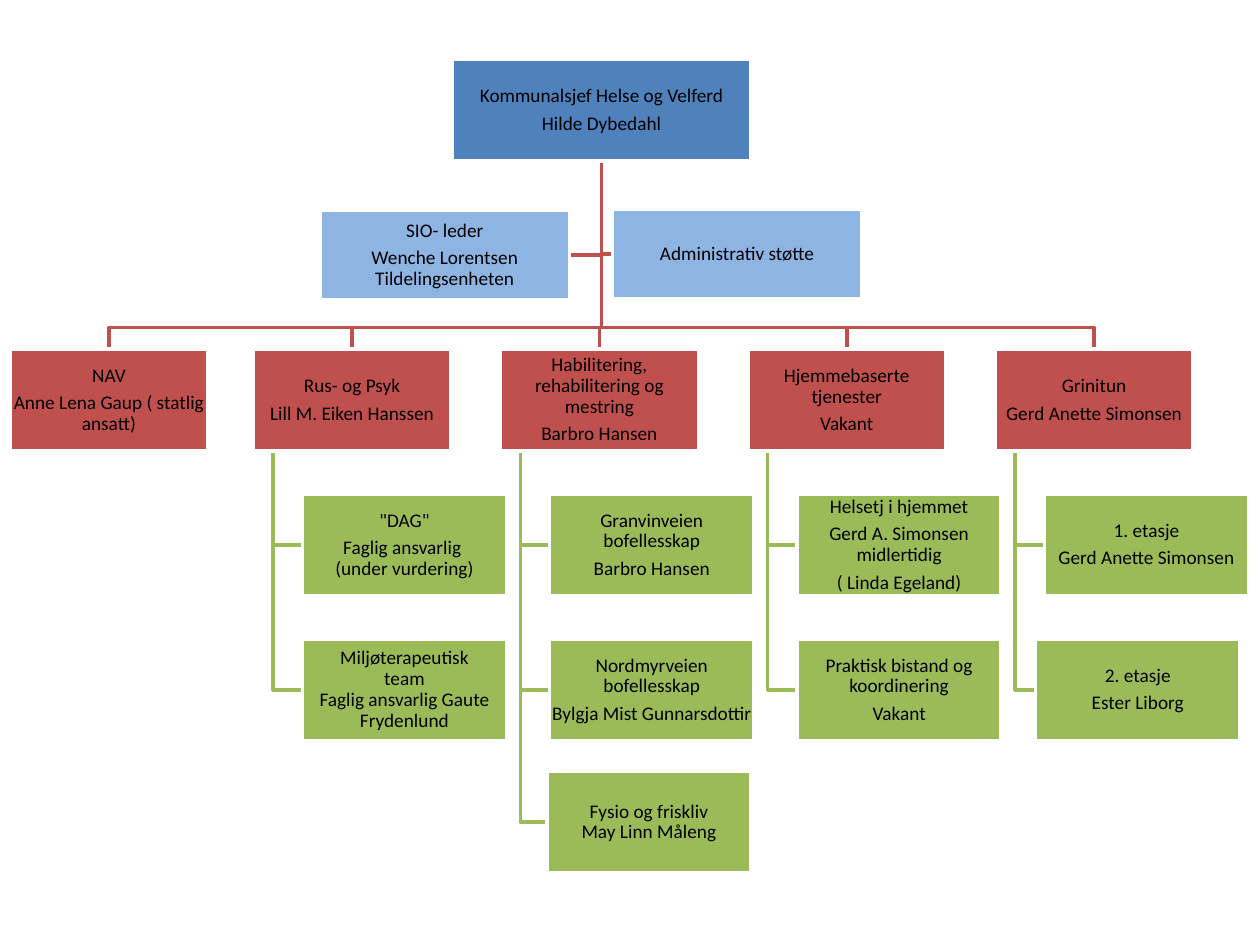
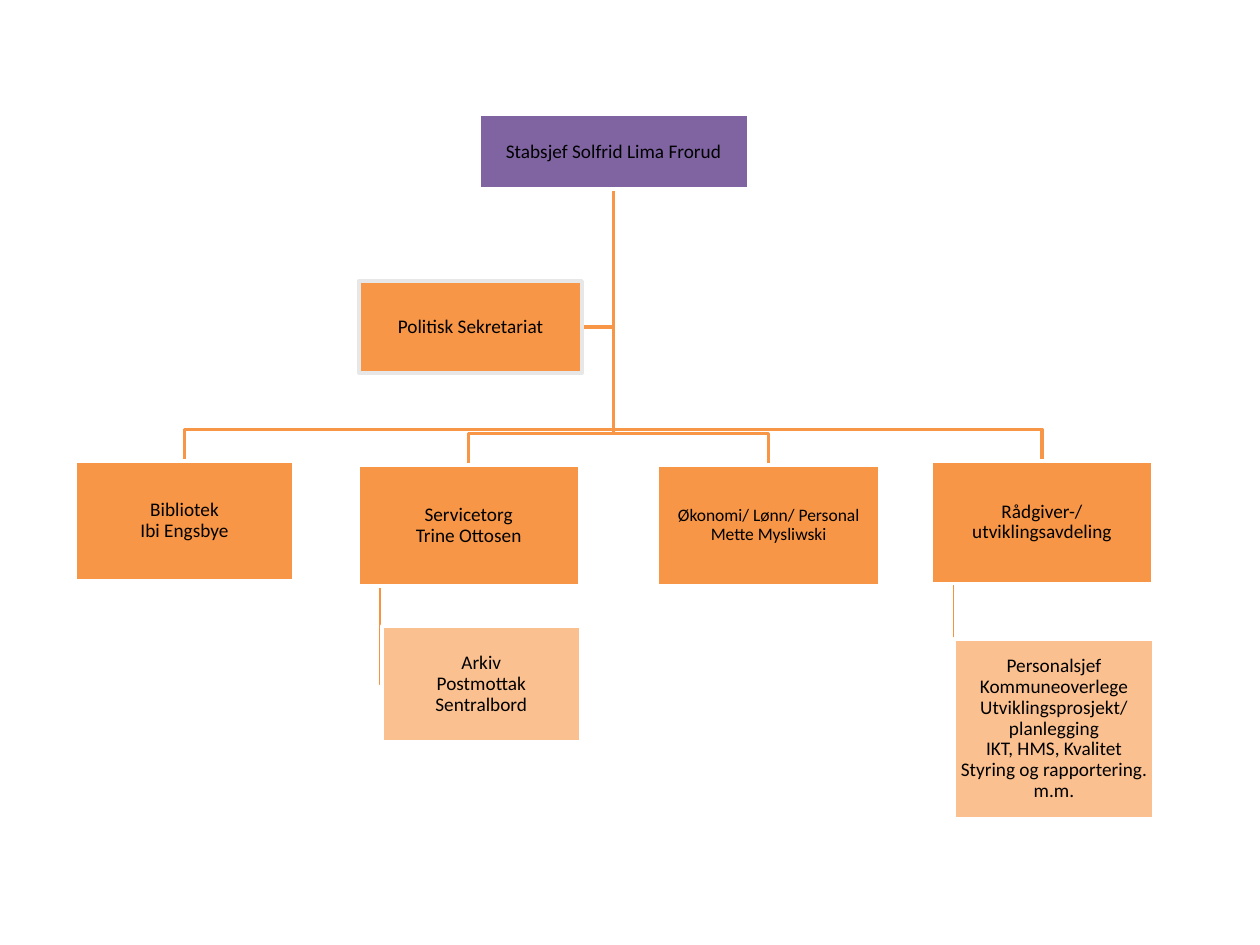
from dataclasses import dataclass

from lxml import etree
from pptx import Presentation
from pptx import util as u
from pptx.dml.color import RGBColor
from pptx.enum import shapes, text
from pptx.oxml.ns import qn

BLUE, LIGHT_BLUE, RED, GREEN = "4F81BD", "8EB4E3", "C0504D", "9BBB59"
PURPLE, ORANGE, LIGHT_ORANGE, DEEP_ORANGE = "8064A2", "F79646", "FAC090", "F69240"
WHITE, GREY, BLACK = "FFFFFF", "E7E7E7", "000000"


def color(hex_code):
    return RGBColor.from_string(hex_code)


@dataclass
class Unit:
    """One box of the organisation chart, in inches; \\v breaks a line, \\n a paragraph."""
    label: str
    left: float
    top: float
    width: float
    height: float
    fill: str
    border: str = WHITE
    size: float = 11
    gap: float = 0.35

    @property
    def right(self):
        return self.left + self.width

    @property
    def bottom(self):
        return self.top + self.height

    @property
    def center(self):
        return self.left + self.width / 2

    @property
    def middle(self):
        return self.top + self.height / 2

    @property
    def stem(self):
        """Where the line to the units below leaves, a tenth in from the left."""
        return self.left + self.width / 10


class Chart:
    font = "Calibri"
    line_width = 2

    def __init__(self):
        self.deck = Presentation()
        self.deck.slide_width = u.Inches(10)
        self.deck.slide_height = u.Inches(7.5)
        self.page = None

    def new_page(self):
        self.page = self.deck.slides.add_slide(self.deck.slide_layouts[6])

    def box(self, unit):
        box = self.page.shapes.add_shape(
            shapes.MSO_SHAPE.RECTANGLE, u.Inches(unit.left), u.Inches(unit.top),
            u.Inches(unit.width), u.Inches(unit.height))
        box.shadow.inherit = False
        box.fill.solid()
        box.fill.fore_color.rgb = color(unit.fill)
        box.line.color.rgb = color(unit.border)
        box.line.width = u.Pt(self.line_width)
        frame = box.text_frame
        frame.word_wrap = True
        frame.vertical_anchor = text.MSO_ANCHOR.MIDDLE
        frame.margin_left = frame.margin_right = u.Inches(0.01)
        frame.margin_top = frame.margin_bottom = u.Inches(0.01)
        frame.text = unit.label
        for para in frame.paragraphs:
            para.alignment = text.PP_ALIGN.CENTER
            para.line_spacing = 0.9
            para.space_after = u.Pt(unit.size * unit.gap)
            for span in para.runs:
                span.font.name = self.font
                span.font.size = u.Pt(unit.size)
                span.font.color.rgb = color(BLACK)

    def bent_line(self, points, stroke, width=line_width):
        start, *rest = [(u.Inches(x), u.Inches(y)) for x, y in points]
        builder = self.page.shapes.build_freeform(*start)
        builder.add_line_segments(rest, close=False)
        path = builder.convert_to_shape()
        path.shadow.inherit = False
        path.fill.background()
        path.line.color.rgb = color(stroke)
        path.line.width = u.Pt(width)

    def straight_line(self, start, end, stroke, width):
        line = self.page.shapes.add_connector(
            shapes.MSO_CONNECTOR.STRAIGHT, *[u.Inches(v) for v in (*start, *end)])
        line.line.color.rgb = color(stroke)
        line.line.width = u.Pt(width)
        etree.SubElement(line._element.spPr, qn("a:effectLst"))

    def trunk(self, chief, unit, rise, stroke):
        """Line down from the chief, along a rail `rise` above the unit, into its top."""
        rail = unit.top - rise
        self.bent_line([(chief.center, chief.bottom), (chief.center, rail),
                        (unit.center, rail), (unit.center, unit.top)], stroke)

    def side_branch(self, chief, unit, stroke):
        """Line from the chief to the nearer side of a staff unit."""
        edge = unit.right if unit.center < chief.center else unit.left
        self.bent_line([(chief.center, chief.bottom), (chief.center, unit.middle),
                        (edge, unit.middle)], stroke)

    def branch(self, parent, child, stroke, width=line_width):
        self.bent_line([(parent.stem, parent.bottom), (parent.stem, child.middle),
                        (child.left, child.middle)], stroke, width)


def health_page(chart):
    chart.new_page()
    height, top = 0.81, 2.77
    team_tops = [3.92, 5.07, 6.12]
    chief = Unit("Kommunalsjef Helse og Velferd\nHilde Dybedahl",
                 3.59, 0.47, 2.37, height, BLUE)
    staff = [
        Unit("SIO- leder\nWenche Lorentsen Tildelingsenheten", 2.54, 1.67, 1.98, 0.71, LIGHT_BLUE),
        Unit("Administrativ støtte", 4.86, 1.66, 1.98, 0.71, LIGHT_BLUE),
    ]
    nav = Unit("NAV\nAnne Lena Gaup ( statlig ansatt)", 0.08, top, 1.57, height, RED)
    departments = [
        ("Rus- og Psyk\nLill M. Eiken Hanssen",
         ['"DAG"\nFaglig ansvarlig \v(under vurdering)',
          "Miljøterapeutisk\nteam\nFaglig ansvarlig Gaute Frydenlund"]),
        ("Habilitering, rehabilitering og mestring\nBarbro Hansen",
         ["Granvinveien bofellesskap\nBarbro Hansen",
          "Nordmyrveien bofellesskap\nBylgja Mist Gunnarsdottir",
          "Fysio og friskliv\vMay Linn Måleng"]),
        ("Hjemmebaserte tjenester\nVakant",
         ["Helsetj i hjemmet\nGerd A. Simonsen midlertidig\n( Linda Egeland)",
          "Praktisk bistand og koordinering\nVakant"]),
        ("Grinitun\nGerd Anette Simonsen",
         ["1. etasje\nGerd Anette Simonsen", "2. etasje\nEster Liborg"]),
    ]
    heads, teams = [nav], []
    for column, (label, team_labels) in enumerate(departments):
        head = Unit(label, 2.01 + 1.963 * column, top, 1.57, height, RED)
        heads.append(head)
        for team_label, team_top in zip(team_labels, team_tops):
            team = Unit(team_label, head.left + 0.39, team_top, 1.62, height, GREEN)
            teams.append((head, team))
    # Three teams depart from the common layout.
    for _, team in teams:
        if team.label.startswith("Miljø"):
            team.gap = 0
        elif team.label.startswith("Fysio"):
            team.left = 4.34
        elif team.label.startswith("2. etasje"):
            team.left = 8.22

    for unit in staff:
        chart.side_branch(chief, unit, RED)
    for head, team in teams:
        chart.branch(head, team, GREEN)
    for head in heads:
        chart.trunk(chief, head, 0.17, RED)
    for unit in [chief, *heads, *[team for _, team in teams], *staff]:
        chart.box(unit)


def staff_page(chart):
    chart.new_page()
    chief = Unit("Stabsjef Solfrid Lima Frorud", 3.8, 0.91, 2.14, 0.59, PURPLE)
    secretariat = Unit("Politisk Sekretariat", 2.85, 2.23, 1.77, 0.73, ORANGE, border=GREY)
    library = Unit("Bibliotek\vIbi Engsbye", 0.6, 3.66, 1.73, 0.95, ORANGE)
    service = Unit("Servicetorg\vTrine Ottosen", 2.84, 3.69, 1.76, 0.96, ORANGE)
    finance = Unit("Økonomi/ Lønn/ Personal\vMette Mysliwski",
                   5.22, 3.69, 1.76, 0.96, ORANGE, size=10)
    advisers = Unit("Rådgiver-/ utviklingsavdeling", 7.39, 3.66, 1.76, 0.97, ORANGE)
    archive = Unit("Arkiv\vPostmottak\vSentralbord", 3.03, 4.97, 1.58, 0.92, LIGHT_ORANGE)
    development = Unit(
        "Personalsjef\vKommuneoverlege\vUtviklingsprosjekt/\vplanlegging\v"
        "IKT, HMS, Kvalitet\vStyring og rapportering. m.m.",
        7.57, 5.07, 1.59, 1.43, LIGHT_ORANGE)
    heads = [library, service, finance, advisers]

    chart.side_branch(chief, secretariat, ORANGE)
    chart.straight_line((advisers.stem, advisers.bottom),
                        (advisers.stem, development.middle), DEEP_ORANGE, 0.75)
    chart.branch(service, archive, DEEP_ORANGE, 0.75)
    for head in heads:
        chart.trunk(chief, head, 0.25, ORANGE)
    for unit in [chief, *heads, archive, development, secretariat]:
        chart.box(unit)


def main():
    chart = Chart()
    health_page(chart)
    staff_page(chart)
    chart.deck.save("out.pptx")


if __name__ == "__main__":
    main()
